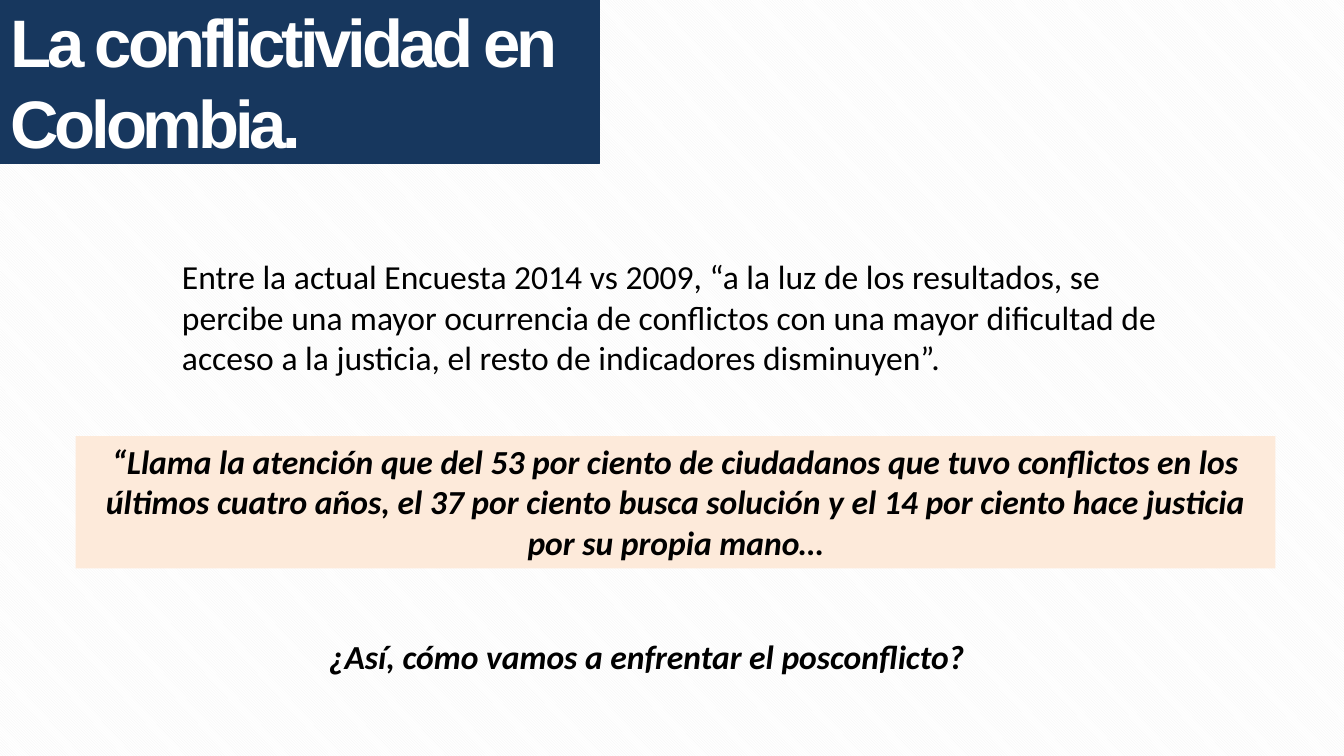
from pptx import Presentation
from pptx.dml.color import RGBColor
from pptx.enum.dml import MSO_PATTERN
from pptx.enum.shapes import MSO_SHAPE
from pptx.enum.text import MSO_ANCHOR, MSO_AUTO_SIZE, PP_ALIGN
from pptx.util import Pt

HEADING = "La conflictividad en Colombia."
FINDING = ("Entre la actual Encuesta 2014 vs 2009, “a la luz de los resultados, se percibe "
           "una mayor ocurrencia de conflictos con una mayor dificultad de acceso a la "
           "justicia, el resto de indicadores disminuyen”.")
QUOTE = ("“Llama la atención que del 53 por ciento de ciudadanos que tuvo conflictos en los "
         "últimos cuatro años, el 37 por ciento busca solución y el 14 por ciento hace "
         "justicia por su propia mano…")
QUESTION = "¿Así, cómo vamos a enfrentar el posconflicto?"

NAVY, PEACH, BLACK, WHITE = "17375E", "FDEADA", "000000", "FFFFFF"
STRIPE = "F2F2F2"

# left, top, width, height in points
HEADING_BOX = (-2, -5, 430.5, 121.5)
FINDING_BOX = (123, 179.5, 720, 94.5)
QUOTE_BOX = (54, 311.5, 857.5, 94.5)
QUESTION_BOX = (54, 451, 816.5, 36)


def color(hex_code):
    return RGBColor.from_string(hex_code)


def write(shape, text, size, font, hex_code, align, bold=False, italic=False):
    frame = shape.text_frame
    frame.word_wrap = True
    frame.vertical_anchor = MSO_ANCHOR.TOP
    frame.text = text
    paragraph = frame.paragraphs[0]
    paragraph.alignment = align
    run = paragraph.runs[0]
    run.font.size = Pt(size)
    run.font.name = font
    run.font.bold = bold
    run.font.italic = italic
    run.font.color.rgb = color(hex_code)
    return paragraph


def write_statement(shape, text, align=PP_ALIGN.CENTER, emphasis=True):
    write(shape, text, 24, "Calibri", BLACK, align, emphasis, emphasis)
    shape.text_frame.auto_size = MSO_AUTO_SIZE.SHAPE_TO_FIT_TEXT


def add_heading(slide):
    heading = slide.shapes.title
    heading.left, heading.top, heading.width, heading.height = map(Pt, HEADING_BOX)
    heading.fill.solid()
    heading.fill.fore_color.rgb = color(NAVY)
    heading.line.color.rgb = color(NAVY)
    heading.line.width = Pt(0.75)
    paragraph = write(heading, HEADING, 48, "Arial", WHITE, PP_ALIGN.LEFT, bold=True)
    paragraph.line_spacing = Pt(58)
    paragraph.runs[0].font._element.set("spc", "-300")
    frame = heading.text_frame
    frame.auto_size = MSO_AUTO_SIZE.NONE
    frame.margin_left = frame.margin_right = Pt(9.5)
    frame.margin_top = frame.margin_bottom = Pt(5)


def main():
    deck = Presentation()
    deck.slide_width, deck.slide_height = Pt(960.5), Pt(540)
    slide = deck.slides.add_slide(deck.slide_layouts.get_by_name("Title Only"))

    backdrop = slide.background.fill
    backdrop.patterned()
    backdrop.pattern = MSO_PATTERN.LIGHT_DOWNWARD_DIAGONAL
    backdrop.fore_color.rgb = color(STRIPE)
    backdrop.back_color.rgb = color(WHITE)

    add_heading(slide)

    finding = slide.shapes.add_textbox(*map(Pt, FINDING_BOX))
    write_statement(finding, FINDING, PP_ALIGN.LEFT, emphasis=False)

    quote = slide.shapes.add_shape(MSO_SHAPE.RECTANGLE, *map(Pt, QUOTE_BOX))
    quote.shadow.inherit = False
    quote.fill.solid()
    quote.fill.fore_color.rgb = color(PEACH)
    quote.line.fill.background()
    write_statement(quote, QUOTE)

    question = slide.shapes.add_textbox(*map(Pt, QUESTION_BOX))
    write_statement(question, QUESTION)

    deck.save("out.pptx")


if __name__ == "__main__":
    main()
